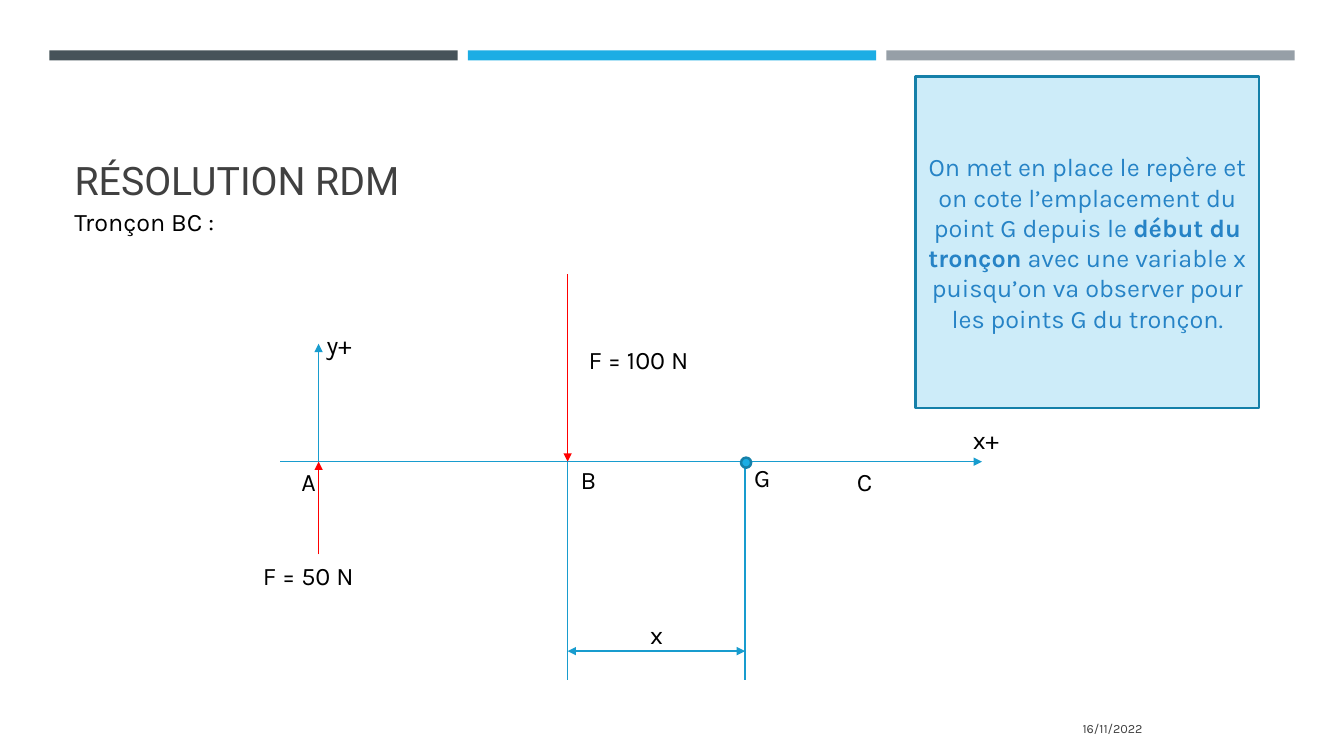
from lxml import etree
from pptx import Presentation, util as u
from pptx.dml.color import RGBColor
from pptx.enum import shapes, text
from pptx.oxml.ns import qn

PX = 9144  # 100 px to the inch
BLUE, AXIS, EDGE, RED, NOTE = "1CADE4", "189CCE", "1580A9", "FF0000", "2683C6"
BLACK, GREY = "000000", "404040"
X_A, X_B, X_G, Y_AXIS = 316, 563, 739, 458


def box(x, y, w, h):
    return [u.Emu(v * PX) for v in (x, y, w, h)]


def rgb(hex_code):
    return RGBColor.from_string(hex_code)


def style(tf, size, color, font="Karla", align=text.PP_ALIGN.LEFT,
          anchor=text.MSO_ANCHOR.TOP):
    tf.word_wrap = True
    tf.vertical_anchor = anchor
    for p in tf.paragraphs:
        p.alignment = align
        for r in p.runs:
            r.font.size = u.Pt(size)
            r.font.name = font
            r.font.color.rgb = rgb(color)


def add_label(slide, words, x, y, w=99, size=18, color=BLACK, **layout):
    tf = slide.shapes.add_textbox(*box(x, y, w, 40)).text_frame
    tf.text = words
    style(tf, size, color, **layout)


def add_block(slide, kind, x, y, w, h, fill, edge=None, alpha=None):
    """Add a filled shape; alpha is its opacity in percent."""
    sp = slide.shapes.add_shape(kind, *box(x, y, w, h))
    sp.shadow.inherit = False
    sp.fill.solid()
    sp.fill.fore_color.rgb = rgb(fill)
    if alpha:
        clr = sp.fill._xPr.find(qn("a:solidFill"))[0]
        etree.SubElement(clr, qn("a:alpha"), val=str(alpha * 1000))
    if edge:
        sp.line.color.rgb = rgb(edge)
        sp.line.width = u.Pt(1.75)
    else:
        sp.line.fill.background()
    return sp


def add_line(slide, x1, y1, x2, y2, color=AXIS, ends=()):
    """Draw a line; ends lists headEnd (start) and tailEnd (finish) arrows."""
    line = slide.shapes.add_connector(
        shapes.MSO_CONNECTOR.STRAIGHT, *box(x1, y1, x2, y2))
    line.line.color.rgb = rgb(color)
    line.line.width = u.Pt(1)
    ln = line.line._get_or_add_ln()
    for end in ends:
        etree.SubElement(ln, qn("a:" + end), type="triangle")
    etree.SubElement(line._element.spPr, qn("a:effectLst"))


def add_title(slide, words):
    title = slide.shapes.title
    title.left, title.top, title.width, title.height = box(64, 77, 1206, 130)
    title.text_frame.text = words
    style(title.text_frame, 28, GREY, font="Roboto",
          anchor=text.MSO_ANCHOR.BOTTOM)


def add_note(slide, parts):
    """Add the tinted note; parts are (words, bold) pairs."""
    sp = add_block(slide, shapes.MSO_SHAPE.RECTANGLE, 908, 76, 341, 329,
                   BLUE, EDGE, alpha=22)
    p = sp.text_frame.paragraphs[0]
    for words, bold in parts:
        r = p.add_run()
        r.text = words
        r.font.bold = bold
    style(sp.text_frame, 18, NOTE, align=text.PP_ALIGN.CENTER,
          anchor=text.MSO_ANCHOR.MIDDLE)


def add_diagram(slide):
    arrow = ("tailEnd",)
    add_line(slide, 278, Y_AXIS, 974, Y_AXIS, ends=arrow)
    add_line(slide, X_A, Y_AXIS, X_A, 341, ends=arrow)
    add_line(slide, X_A, 550, X_A, Y_AXIS, RED, arrow)
    add_line(slide, X_B, 272, X_B, Y_AXIS, RED, arrow)
    for x in (X_B, X_G):
        add_line(slide, x, Y_AXIS, x, 675)
    add_line(slide, X_B, 646, X_G, 646, ends=("headEnd", "tailEnd"))
    add_block(slide, shapes.MSO_SHAPE.OVAL, X_G - 4, Y_AXIS - 4, 10, 10,
              BLUE, EDGE)
    for words, x, y in (("A", 289, 458), ("B", 566, 456), ("G", 738, 454),
                        ("C", 840, 458), ("x", 635, 609), ("y+", 314, 322),
                        ("x+", 955, 416)):
        add_label(slide, words, x, y)
    add_label(slide, "F = 50 N", 251, 551, 137)
    add_label(slide, "F = 100 N", 574, 337, 137)


def main():
    prs = Presentation()
    prs.slide_width, prs.slide_height = box(0, 0, 1333, 750)[2:]
    slide = prs.slides.add_slide(prs.slide_layouts[5])
    for i, color in enumerate(("465359", BLUE, "969FA7")):
        add_block(slide, shapes.MSO_SHAPE.RECTANGLE, 49 + 415 * i, 50,
                  405, 10, color)
    add_title(slide, "RÉSOLUTION RDM")
    add_label(slide, "Tronçon BC :", 64, 200, 269)
    add_diagram(slide)
    add_note(slide, (
        ("On met en place le repère et on cote l’emplacement du point G "
         "depuis le ", False),
        ("début du tronçon", True),
        (" avec une variable x puisqu’on va observer pour les points G "
         "du tronçon.", False)))
    add_label(slide, "16/11/2022", 832, 703, 311, 9, GREY,
              align=text.PP_ALIGN.RIGHT, anchor=text.MSO_ANCHOR.MIDDLE)
    prs.save("out.pptx")


if __name__ == "__main__":
    main()
